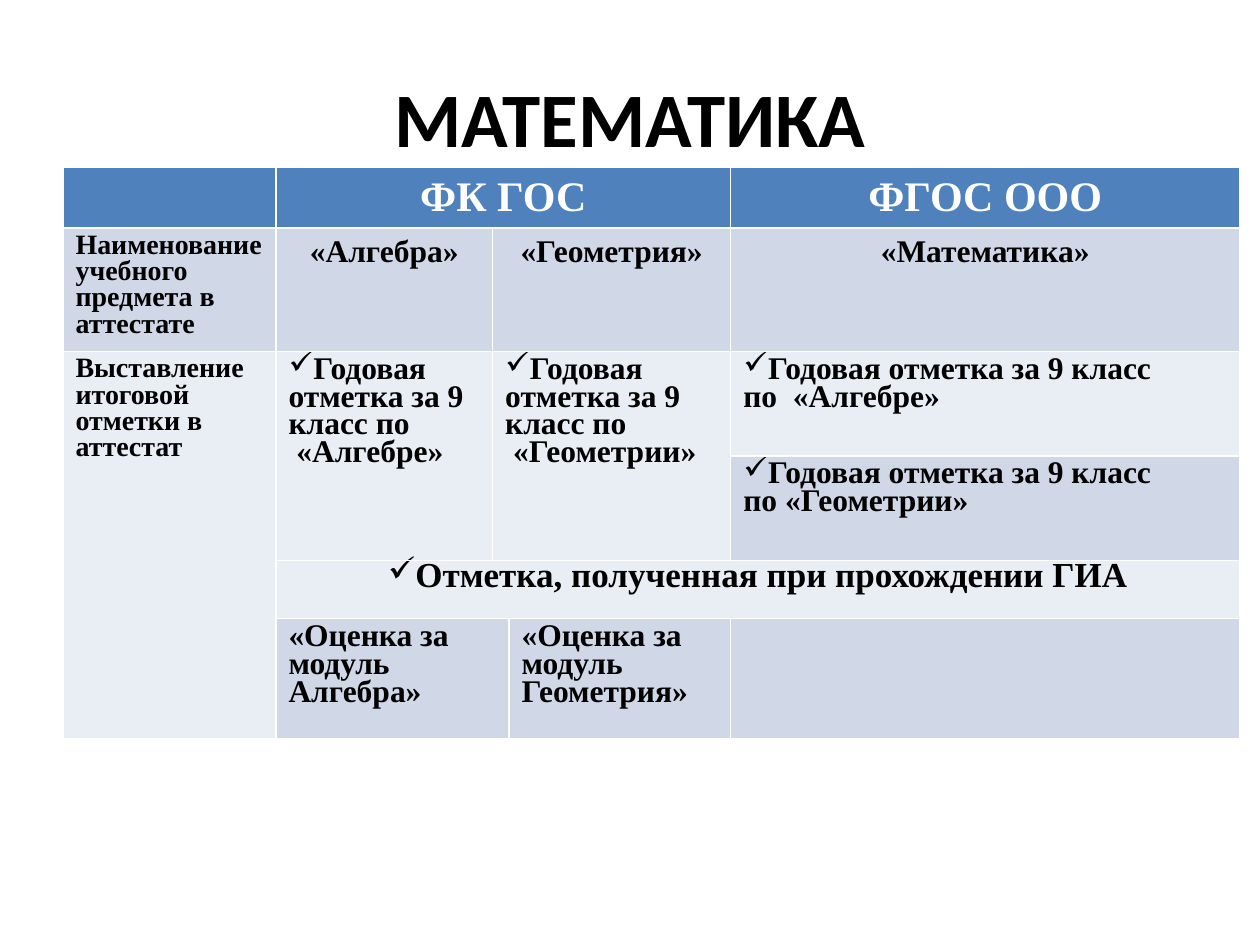
from lxml.etree import SubElement
from pptx import Presentation
from pptx.dml.color import RGBColor
from pptx.enum.text import PP_ALIGN as Align
from pptx.oxml.ns import qn
from pptx.util import Inches, Pt

TITLE = "МАТЕМАТИКА"
COLUMNS = [1.69, 1.72, 0.13, 1.76, 4.04]
ROWS = [0.48, 0.98, 0.83, 0.83, 0.46, 0.95]
HEADER, BANDS = "4F81BD", ("E9EDF4", "D0D8E8")
CHECK = "✓"

HEADING = dict(size=24, color="FFFFFF", align=Align.CENTER)
LABEL = dict(size=16, leading=15)
SUBJECT = dict(size=18, align=Align.CENTER)
MARK = dict(size=18, leading=16)
EXAM = dict(size=20, leading=16, align=Align.CENTER)

# row, column, row span, column span, paragraphs, style
CELLS = [
    (0, 1, 1, 3, ["ФК ГОС"], HEADING),
    (0, 4, 1, 1, ["ФГОС ООО"], HEADING),
    (1, 0, 1, 1, ["Наименование учебного предмета в аттестате"], LABEL),
    (1, 1, 1, 1, ["«Алгебра»"], SUBJECT),
    (1, 2, 1, 2, ["«Геометрия»"], SUBJECT),
    (1, 4, 1, 1, ["«Математика»"], SUBJECT),
    (2, 0, 4, 1, ["Выставление итоговой отметки в аттестат"], LABEL),
    (2, 1, 2, 1, ["✓Годовая отметка за 9 класс по \v «Алгебре»"], MARK),
    (2, 2, 2, 2, ["✓Годовая отметка за 9 класс по\v «Геометрии»"], MARK),
    (2, 4, 1, 1, ["✓Годовая отметка за 9 класс \vпо  «Алгебре»"], MARK),
    (3, 4, 1, 1, ["✓Годовая отметка за 9 класс", "по «Геометрии»"], MARK),
    (4, 1, 1, 4, ["✓Отметка, полученная при прохождении ГИА"], EXAM),
    (5, 1, 1, 2, ["«Оценка за модуль", "Алгебра»"], MARK),
    (5, 3, 1, 1, ["«Оценка за модуль Геометрия»"], MARK),
]


def rgb(value):
    return RGBColor.from_string(value)


def write(paragraph, text, size, font="Times New Roman", color="000000",
          align=Align.LEFT, leading=None):
    paragraph.text = text.removeprefix(CHECK)
    paragraph.alignment = align
    paragraph.font.name, paragraph.font.size = font, Pt(size)
    paragraph.font.bold, paragraph.font.color.rgb = True, rgb(color)
    if leading:
        paragraph.line_spacing = Pt(leading)
    if text.startswith(CHECK):
        properties = paragraph._p.get_or_add_pPr()
        properties.set("marL", "0")
        properties.set("indent", "0")
        SubElement(properties, qn("a:buChar"), char=CHECK)


def add_comparison(slide):
    table = slide.shapes.add_table(
        len(ROWS), len(COLUMNS), Inches(0.5), Inches(1.33),
        Inches(sum(COLUMNS)), Inches(sum(ROWS))).table
    for column, width in zip(table.columns, COLUMNS):
        column.width = Inches(width)
    for index, (row, height) in enumerate(zip(table.rows, ROWS)):
        row.height = Inches(height)
        for cell in row.cells:
            cell.fill.solid()
            cell.fill.fore_color.rgb = rgb(BANDS[index % 2] if index else HEADER)
    for row, column, down, across, paragraphs, style in CELLS:
        cell = table.cell(row, column)
        if down * across > 1:
            cell.merge(table.cell(row + down - 1, column + across - 1))
        frame = cell.text_frame
        for index, text in enumerate(paragraphs):
            paragraph = frame.add_paragraph() if index else frame.paragraphs[0]
            write(paragraph, text, **style)


def main():
    """Build the slide comparing mathematics grading under two standards."""
    deck = Presentation()
    deck.slide_width, deck.slide_height = Inches(10), Inches(7.5)
    slide = deck.slides.add_slide(deck.slide_layouts[5])
    title = slide.shapes.title
    title.left, title.top = Inches(0.5), Inches(0.3)
    title.width, title.height = Inches(9), Inches(1.25)
    write(title.text_frame.paragraphs[0], TITLE, 44, "Calibri", align=Align.CENTER)
    add_comparison(slide)
    deck.save("out.pptx")


if __name__ == "__main__":
    main()
